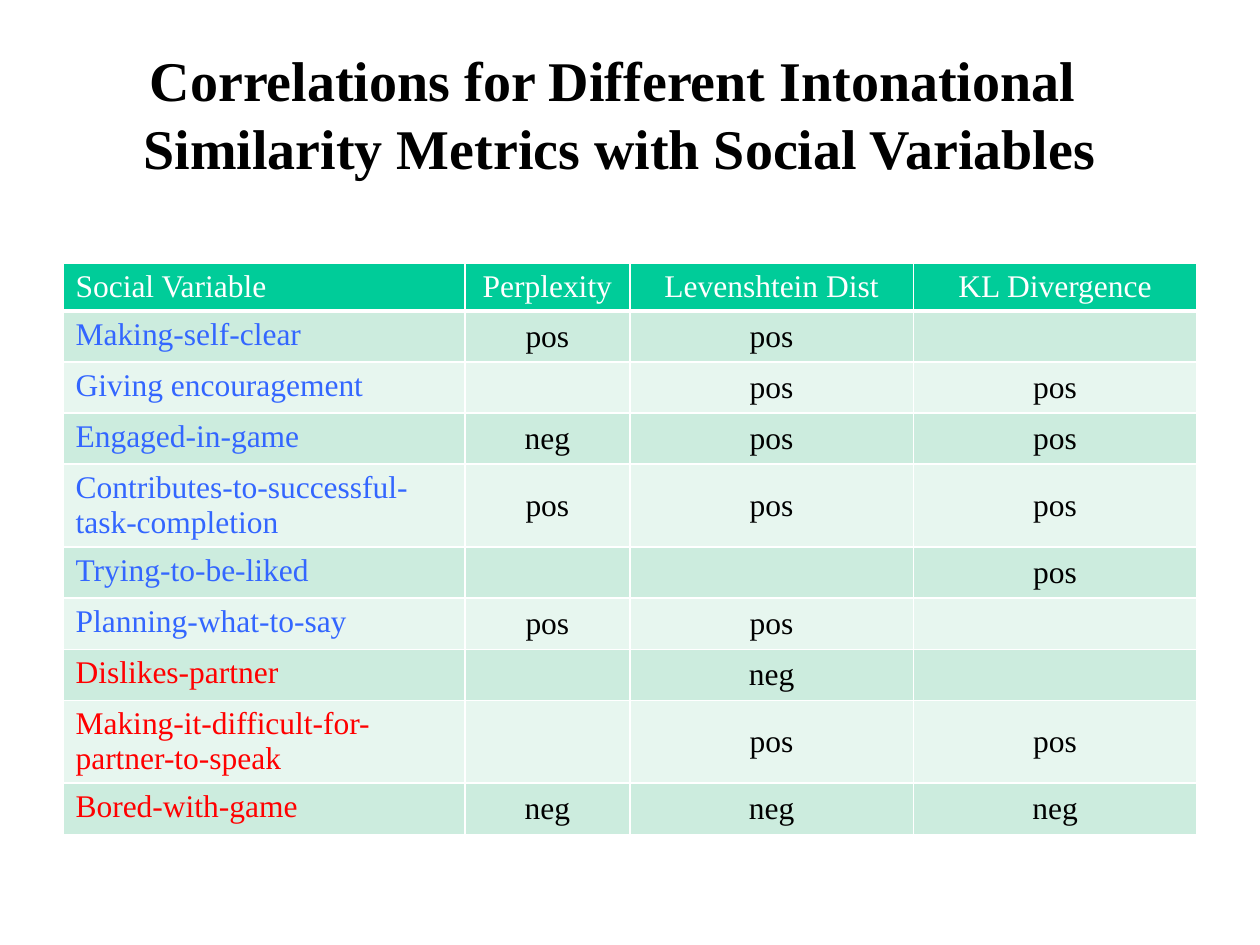
from dataclasses import dataclass

from lxml.etree import SubElement
from pptx import Presentation
from pptx.dml.color import RGBColor
from pptx.enum.text import MSO_ANCHOR as Anchor, MSO_AUTO_SIZE as AutoSize, PP_ALIGN as Align
from pptx.oxml.ns import qn
from pptx.util import Cm, Pt


@dataclass(frozen=True)
class Theme:
    font: str = "Times New Roman"
    title_size: int = 32
    table_size: int = 18
    text: str = "000000"
    header_text: str = "FFFFFF"
    header_fill: str = "00CC99"
    bands: tuple = ("CCECDE", "E7F6EF")
    positive: str = "3366FF"
    negative: str = "FF0000"
    border: str = "FFFFFF"
    thin: int = 1
    thick: int = 3


THEME = Theme()

TITLE = "Correlations for Different Intonational \vSimilarity Metrics with Social Variables"
HEADERS = ("Social Variable", "Perplexity", "Levenshtein Dist", "KL Divergence")
POSITIVE_VARIABLES = (
    ("Making-self-clear", "pos", "pos", ""),
    ("Giving encouragement", "", "pos", "pos"),
    ("Engaged-in-game", "neg", "pos", "pos"),
    ("Contributes-to-successful-task-completion", "pos", "pos", "pos"),
    ("Trying-to-be-liked", "", "", "pos"),
    ("Planning-what-to-say", "pos", "pos", ""),
)
NEGATIVE_VARIABLES = (
    ("Dislikes-partner", "", "neg", ""),
    ("Making-it-difficult-for-partner-to-speak", "", "pos", "pos"),
    ("Bored-with-game", "neg", "neg", "neg"),
)

COLUMN_WIDTHS = (8.1, 3.33, 5.71, 5.72)
HEADER_HEIGHT, ROW_HEIGHT, WRAPPED_HEIGHT = 0.94, 1.03, 1.67
WRAP_LENGTH = 30  # longer variable names take two lines


def style_paragraph(paragraph, size, color, align, bold=False):
    paragraph.alignment = align
    font = paragraph.font
    font.name, font.size, font.bold = THEME.font, Pt(size), bold
    font.color.rgb = RGBColor.from_string(color)


def add_borders(cell, bottom):
    """Draw the four cell borders; they must come before the fill."""
    properties = cell._tc.get_or_add_tcPr()
    widths = {"a:lnL": THEME.thin, "a:lnR": THEME.thin, "a:lnT": THEME.thin, "a:lnB": bottom}
    for side, width in widths.items():
        line = SubElement(properties, qn(side), w=str(Pt(width)))
        SubElement(SubElement(line, qn("a:solidFill")), qn("a:srgbClr"), val=THEME.border)


def fill_row(table, row, texts, fill, name_color, value_color, bottom=THEME.thin):
    for column, text in enumerate(texts):
        cell = table.cell(row, column)
        is_name = column == 0
        cell.text = text
        cell.vertical_anchor = Anchor.TOP if is_name else Anchor.MIDDLE
        style_paragraph(cell.text_frame.paragraphs[0], THEME.table_size,
                        name_color if is_name else value_color,
                        Align.LEFT if is_name else Align.CENTER)
        add_borders(cell, bottom)
        cell.fill.solid()
        cell.fill.fore_color.rgb = RGBColor.from_string(fill)


def add_title(slide):
    title = slide.shapes.title
    title.left, title.top, title.width, title.height = Cm(1.7), Cm(1), Cm(21.6), Cm(2.56)
    frame = title.text_frame
    frame.text = TITLE
    frame.word_wrap = True
    frame.auto_size = AutoSize.NONE
    frame.vertical_anchor = Anchor.MIDDLE
    style_paragraph(frame.paragraphs[0], THEME.title_size, THEME.text, Align.CENTER, bold=True)


def add_correlation_table(slide):
    variables = [(row, THEME.positive) for row in POSITIVE_VARIABLES]
    variables += [(row, THEME.negative) for row in NEGATIVE_VARIABLES]
    heights = [HEADER_HEIGHT] + [
        WRAPPED_HEIGHT if len(row[0]) > WRAP_LENGTH else ROW_HEIGHT for row, _ in variables]

    table = slide.shapes.add_table(
        len(heights), len(HEADERS), Cm(1.27), Cm(5.31),
        Cm(sum(COLUMN_WIDTHS)), Cm(sum(heights))).table
    table.horz_banding = False
    for column, width in zip(table.columns, COLUMN_WIDTHS):
        column.width = Cm(width)
    for row, height in zip(table.rows, heights):
        row.height = Cm(height)

    # Header, then the banded rows of social variables
    fill_row(table, 0, HEADERS, THEME.header_fill, THEME.header_text, THEME.header_text,
             bottom=THEME.thick)
    for index, (texts, name_color) in enumerate(variables):
        fill_row(table, index + 1, texts, THEME.bands[index % 2], name_color, THEME.text)


def main():
    presentation = Presentation()
    presentation.slide_width, presentation.slide_height = Cm(25.4), Cm(19.05)
    slide = presentation.slides.add_slide(presentation.slide_layouts[5])
    add_title(slide)
    add_correlation_table(slide)
    presentation.save("out.pptx")


if __name__ == "__main__":
    main()
